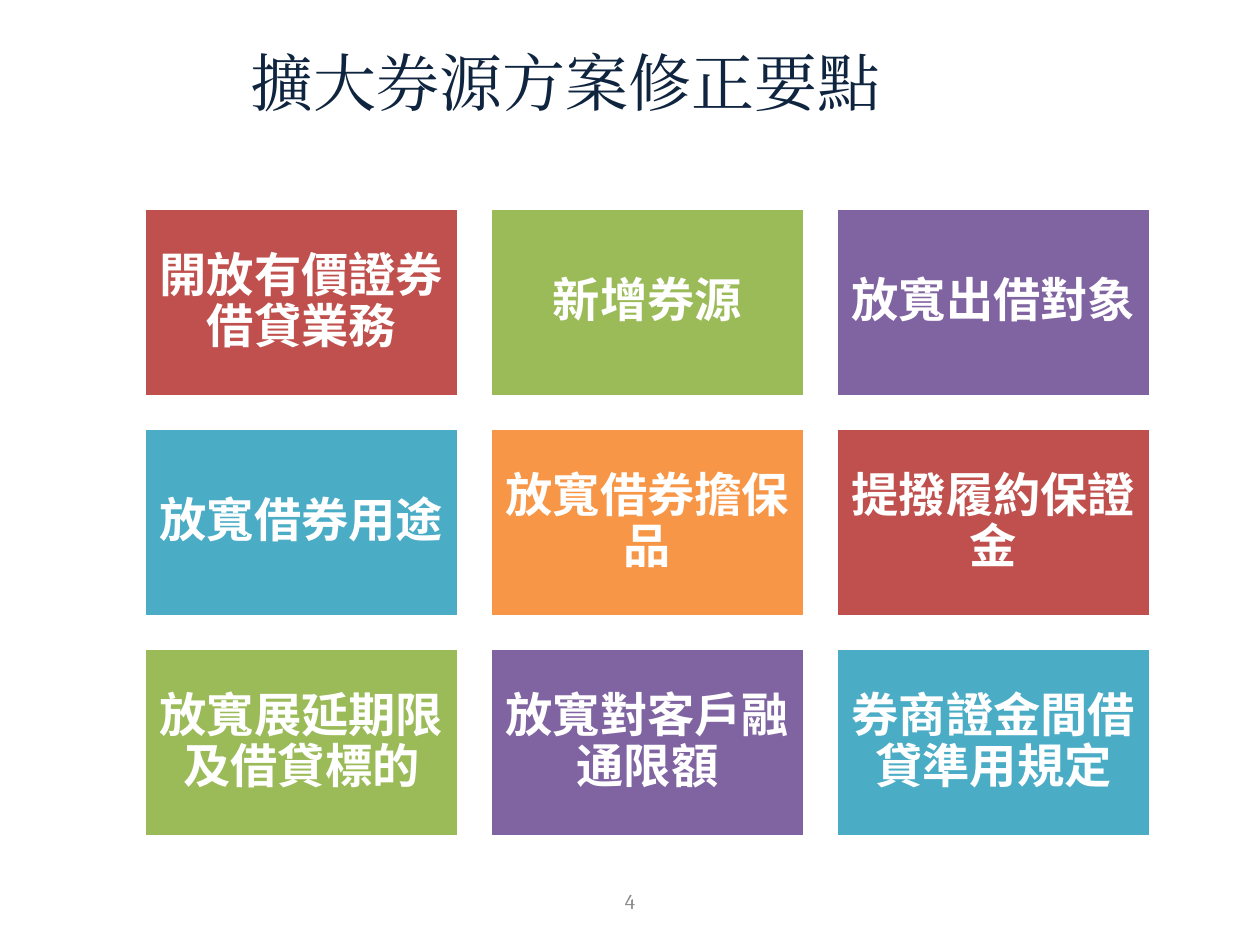
import dataclasses

import lxml.etree
import pptx
import pptx.dml.color
import pptx.enum.shapes
import pptx.enum.text
import pptx.oxml.ns
import pptx.util


@dataclasses.dataclass(frozen=True)
class Theme:
    white: str = "FFFFFF"
    navy: str = "0F243E"
    gray: str = "8C8C8C"
    red: str = "C0504D"
    green: str = "9BBB59"
    purple: str = "8064A2"
    blue: str = "4BACC6"
    orange: str = "F79646"
    serif: str = "Cambria"
    sans: str = "Noto Sans CJK SC"
    head: int = 36
    body: int = 27
    small: int = 12


@dataclasses.dataclass(frozen=True)
class Box:
    left: int
    top: int
    width: int
    height: int


@dataclasses.dataclass(frozen=True)
class Tile:
    text: str
    fill: str


THEME = Theme()
SCALE = 914400 / 126
COLUMNS = 3
FIRST = Box(144, 208, 315, 189)
STEP_X, STEP_Y = 346, 220

TILES = [
    Tile("開放有價證券借貸業務", THEME.red),
    Tile("新增券源", THEME.green),
    Tile("放寬出借對象", THEME.purple),
    Tile("放寬借券用途", THEME.blue),
    Tile("放寬借券擔保品", THEME.orange),
    Tile("提撥履約保證金", THEME.red),
    Tile("放寬展延期限及借貸標的", THEME.green),
    Tile("放寬對客戶融通限額", THEME.purple),
    Tile("券商證金間借貸準用規定", THEME.blue),
]


def px(count: int) -> pptx.util.Emu:
    return pptx.util.Emu(round(count * SCALE))


def place(box: Box) -> list[pptx.util.Emu]:
    return [px(side) for side in dataclasses.astuple(box)]


def color(code: str) -> pptx.dml.color.RGBColor:
    return pptx.dml.color.RGBColor.from_string(code)


def write(shape, text: str, *, size: int, font: str, ink: str,
          bold: bool = False, inset: int | None = None,
          spacing: float | None = None) -> None:
    frame = shape.text_frame
    frame.word_wrap = True
    frame.auto_size = pptx.enum.text.MSO_AUTO_SIZE.NONE
    frame.vertical_anchor = pptx.enum.text.MSO_ANCHOR.MIDDLE
    if inset is not None:
        frame.margin_left = frame.margin_right = px(inset)
        frame.margin_top = frame.margin_bottom = px(inset)
    line = frame.paragraphs[0]
    line.alignment = pptx.enum.text.PP_ALIGN.CENTER
    if spacing is not None:
        line.line_spacing = spacing
    run = line.add_run()
    run.text = text
    run.font.size = pptx.util.Pt(size)
    run.font.bold = bold
    run.font.color.rgb = color(ink)
    run.font.name = font
    props = run._r.get_or_add_rPr()
    east = lxml.etree.SubElement(props, pptx.oxml.ns.qn("a:ea"))
    east.set("typeface", font)


def draw(slide, tile: Tile, box: Box) -> None:
    shape = slide.shapes.add_shape(
        pptx.enum.shapes.MSO_SHAPE.RECTANGLE, *place(box))
    shape.shadow.inherit = False
    shape.fill.solid()
    shape.fill.fore_color.rgb = color(tile.fill)
    shape.line.color.rgb = color(THEME.white)
    shape.line.width = pptx.util.Pt(2)
    write(shape, tile.text, size=THEME.body, font=THEME.sans,
          ink=THEME.white, bold=True, inset=14, spacing=0.9)


def main() -> None:
    deck = pptx.Presentation()
    deck.slide_width, deck.slide_height = px(1260), px(945)
    slide = deck.slides.add_slide(deck.slide_layouts[5])

    title = slide.shapes.title
    title.left, title.top, title.width, title.height = place(
        Box(154, 38, 824, 87))
    write(title, "擴大券源方案修正要點", size=THEME.head,
          font=THEME.serif, ink=THEME.navy)

    for index, tile in enumerate(TILES):
        row, column = divmod(index, COLUMNS)
        box = dataclasses.replace(
            FIRST, left=FIRST.left + column * STEP_X,
            top=FIRST.top + row * STEP_Y)
        draw(slide, tile, box)

    number = slide.shapes.add_textbox(*place(Box(483, 876, 294, 50)))
    write(number, "4", size=THEME.small, font=THEME.serif, ink=THEME.gray)
    deck.save("out.pptx")


if __name__ == "__main__":
    main()
